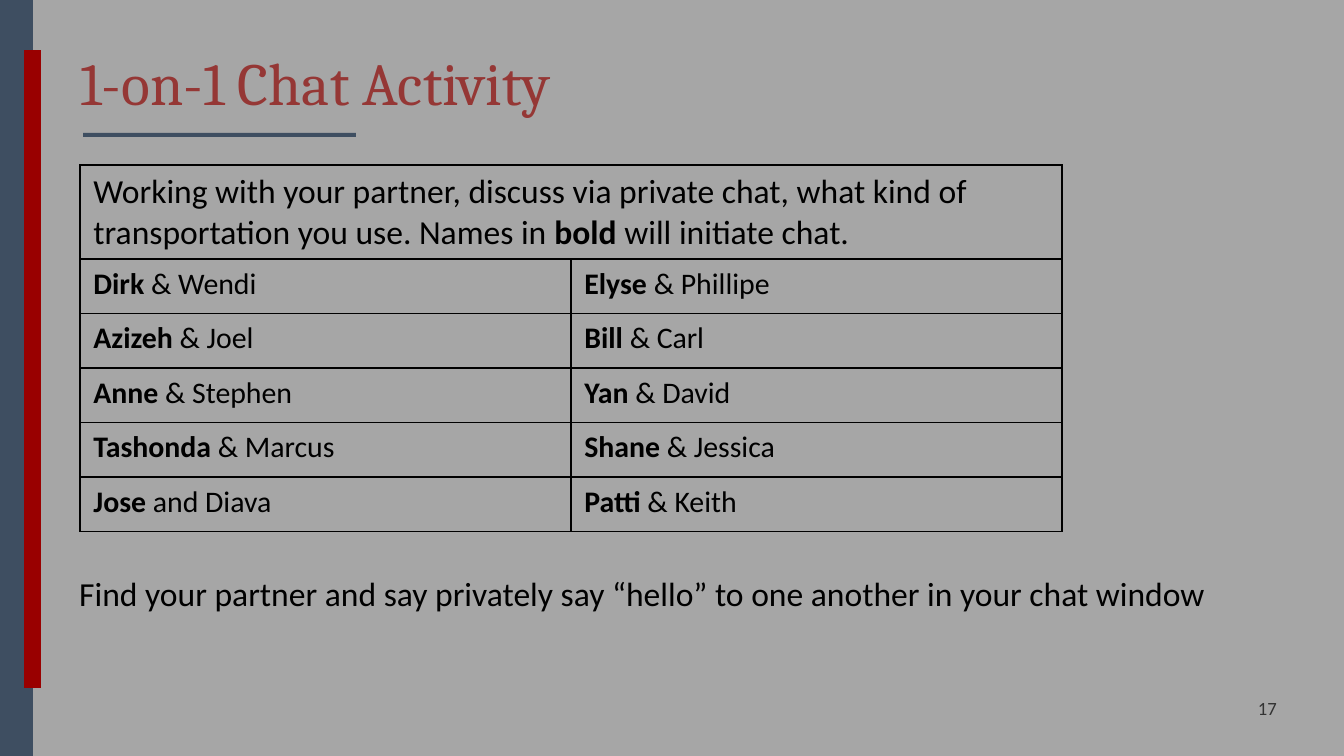
from pptx import Presentation
from pptx.dml.color import RGBColor as RGB
from pptx.enum.shapes import MSO_SHAPE as Shape
from pptx.enum.text import MSO_ANCHOR as Anchor, PP_ALIGN as Align
from pptx.oxml import parse_xml
from pptx.oxml.ns import nsdecls
from pptx.util import Pt

SCALE = 9144000 / 1344
COLORS = {"back": "A6A6A6", "slate": "3E4E61", "red": "990000",
          "title": "953735", "gray": "333333", "black": "000000"}


def px(n):
    return round(n * SCALE)


class Deck:
    body, head = "Calibri", "Cambria"

    def __init__(self, wide, high):
        self.prs = Presentation()
        self.prs.slide_width, self.prs.slide_height = px(wide), px(high)
        self.slide = self.prs.slides.add_slide(self.prs.slide_layouts[6])
        self.paint(self.slide.background.fill, "back")

    def paint(self, fill, color):
        fill.solid()
        fill.fore_color.rgb = RGB.from_string(COLORS[color])

    def bar(self, box, color):
        bar = self.slide.shapes.add_shape(Shape.RECTANGLE, *map(px, box))
        bar.shadow.inherit = False
        self.paint(bar.fill, color)
        bar.line.fill.background()

    def runs(self, para, parts, size, color="black", face=body):
        for words, bold in parts:
            run = para.add_run()
            run.text = words
            font = run.font
            font.name, font.size, font.bold = face, Pt(size), bold
            font.color.rgb = RGB.from_string(COLORS[color])

    def text(self, box, words, size, color="black", face=body,
             align=Align.LEFT, anchor=Anchor.MIDDLE):
        frame = self.slide.shapes.add_textbox(*map(px, box)).text_frame
        frame.word_wrap, frame.vertical_anchor = True, anchor
        para = frame.paragraphs[0]
        para.alignment = align
        self.runs(para, [(words, False)], size, color, face)

    def edge(self, cell):
        props = cell._tc.get_or_add_tcPr()
        for side in "LRTB":
            props.append(parse_xml(
                f'<a:ln{side} {nsdecls("a")} w="12700"><a:solidFill>'
                f'<a:srgbClr val="{COLORS["black"]}"/></a:solidFill></a:ln{side}>'))
        cell.fill.background()

    def table(self, box, intro, rows):
        table = self.slide.shapes.add_table(
            len(rows) + 1, len(rows[0]), *map(px, box)).table
        table.first_row = table.horz_banding = False
        for cell in table.iter_cells():
            self.edge(cell)
        top = table.cell(0, 0)
        top.merge(table.cell(0, len(rows[0]) - 1))
        self.runs(top.text_frame.paragraphs[0], intro, 18)
        for r, row in enumerate(rows, 1):
            for c, (lead, rest) in enumerate(row):
                para = table.cell(r, c).text_frame.paragraphs[0]
                self.runs(para, [(lead, True), (rest, False)], 16)


INTRO = [("Working with your partner, discuss via private chat, what kind of "
          "transportation you use. Names in ", False),
         ("bold", True), (" will initiate chat.", False)]
PAIRS = [
    [("Dirk", " & Wendi"), ("Elyse", " & Phillipe")],
    [("Azizeh", " & Joel"), ("Bill", " & Carl")],
    [("Anne", " & Stephen"), ("Yan", " & David")],
    [("Tashonda", " & Marcus"), ("Shane", " & Jessica")],
    [("Jose", " and Diava"), ("Patti", " & Keith")],
]


def main():
    deck = Deck(1344, 756)
    deck.bar((83, 133, 273, 4), "slate")
    deck.bar((0, 0, 33, 756), "slate")
    deck.bar((24, 50, 17, 638), "red")
    deck.text((67, 31, 1210, 101), "1-on-1 Chat Activity", 32, "title", deck.head)
    deck.text((1185, 688, 105, 40), "17", 10, "gray", align=Align.RIGHT)
    deck.table((80, 165, 982, 327), INTRO, PAIRS)
    deck.text((66, 566, 1167, 54), "Find your partner and say privately say “hello” "
              "to one another in your chat window", 18, anchor=Anchor.TOP)
    deck.prs.save("out.pptx")


if __name__ == "__main__":
    main()
